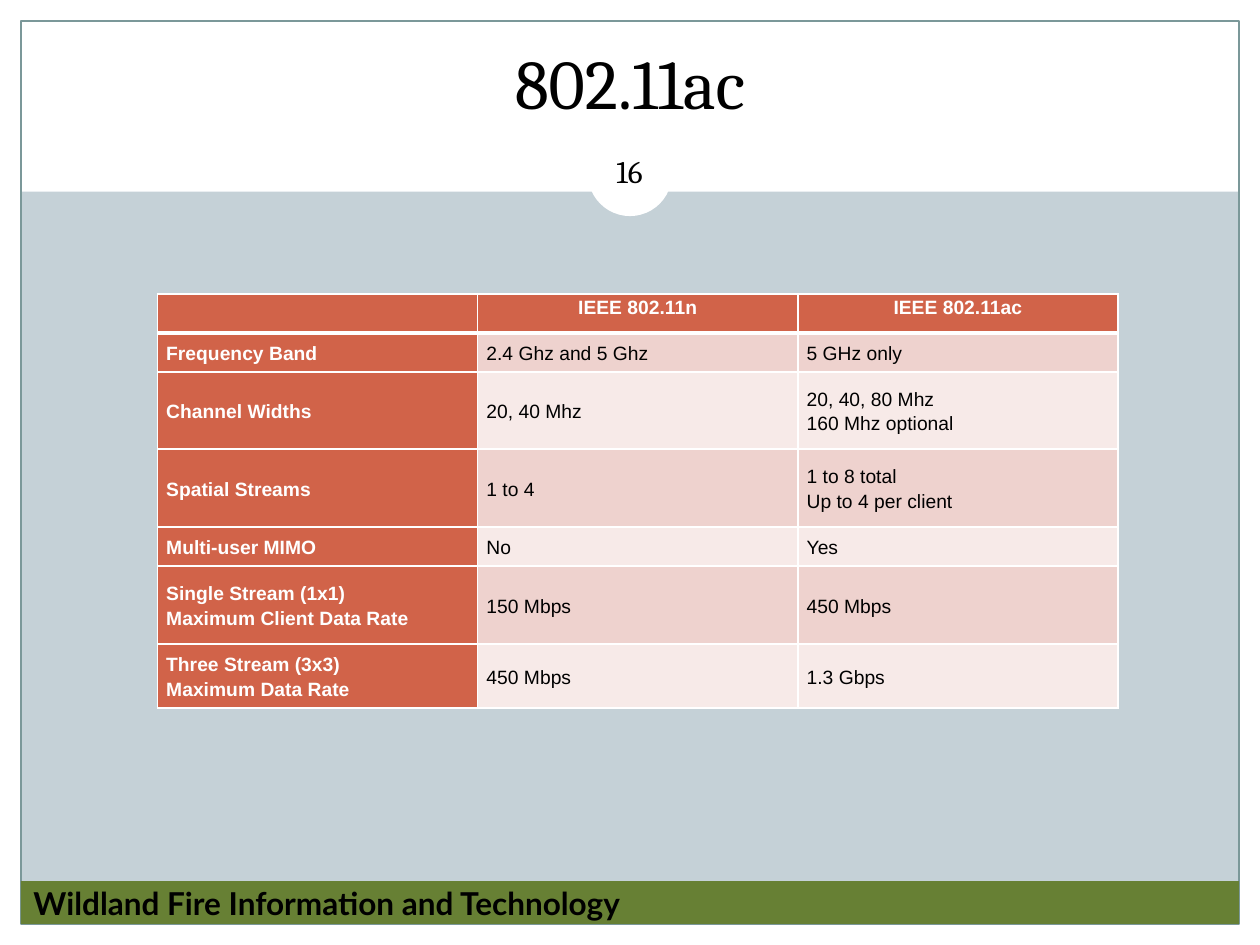
"""Build the 802.11ac comparison slide."""
from lxml import etree
from pptx import Presentation, util as u
from pptx.dml.color import RGBColor
from pptx.enum import shapes, text
from pptx.oxml.ns import qn

Pt = u.Pt


def paint(fill, color):
    fill.solid()
    fill.fore_color.rgb = RGBColor.from_string(color)


def style(frame, font, size, color="000000", bold=False, align=text.PP_ALIGN.LEFT):
    for paragraph in frame.paragraphs:
        paragraph.alignment = align
        for span in paragraph.runs:
            span.font.name = font
            span.font.size = Pt(size)
            span.font.bold = bold
            span.font.color.rgb = RGBColor.from_string(color)


deck = Presentation()
deck.slide_width, deck.slide_height = Pt(720), Pt(540)
page = deck.slides.add_slide(deck.slide_layouts[6])
paint(page.background.fill, "C5D1D7")

RECTANGLE, OVAL = shapes.MSO_SHAPE.RECTANGLE, shapes.MSO_SHAPE.OVAL
panels = [
    (RECTANGLE, (0, 528, 720, 12), "FFFFFF"),
    (RECTANGLE, (0, 0, 720, 109.5), "FFFFFF"),
    (RECTANGLE, (0, 0, 12, 540), "FFFFFF"),
    (RECTANGLE, (708, 0, 12, 540), "FFFFFF"),
    (RECTANGLE, (12, 12, 696, 516), None),
    (OVAL, (336, 75.5, 48, 48), "FFFFFF"),
    (RECTANGLE, (12, 503.5, 696, 24.5), "678034"),
]
for kind, place, color in panels:
    panel = page.shapes.add_shape(kind, *map(Pt, place))
    panel.shadow.inherit = False
    if color:
        paint(panel.fill, color)
        panel.line.fill.background()
    else:
        panel.fill.background()
        paint(panel.line.fill, "7B9899")
        panel.line.width = Pt(0.75)

footer = panel.text_frame
footer.text = "Wildland Fire Information and Technology"
footer.vertical_anchor = text.MSO_ANCHOR.MIDDLE
style(footer, "Lato", 18, bold=True)

labels = [
    ("802.11ac", (24, 18, 672, 60), 40, 7.2, text.MSO_ANCHOR.BOTTOM, text.PP_ALIGN.CENTER),
    ("16", (333.5, 80.5, 52.5, 34.5), 18, 3.6, text.MSO_ANCHOR.MIDDLE, text.PP_ALIGN.CENTER),
]
for words, place, size, inset, anchor, align in labels:
    box = page.shapes.add_textbox(*map(Pt, place))
    frame = box.text_frame
    frame.word_wrap = True
    frame.text = words
    frame.margin_top = frame.margin_bottom = Pt(inset)
    frame.vertical_anchor = anchor
    style(frame, "Cambria", size, align=align)

rows = [
    ("", "IEEE 802.11n", "IEEE 802.11ac"),
    ("Frequency Band", "2.4 Ghz and 5 Ghz", "5 GHz only"),
    ("Channel Widths", "20, 40 Mhz", "20, 40, 80 Mhz\n160 Mhz optional"),
    ("Spatial Streams", "1 to 4", "1 to 8 total\nUp to 4 per client"),
    ("Multi-user MIMO", "No", "Yes"),
    ("Single Stream (1x1)\nMaximum Client Data Rate", "150 Mbps", "450 Mbps"),
    ("Three Stream (3x3)\nMaximum Data Rate", "450 Mbps", "1.3 Gbps"),
]
heights = [22.3, 22.3, 43.9, 44.6, 22.3, 44.6, 36.7]
table = page.shapes.add_table(
    len(rows), 3, Pt(90), Pt(168), Pt(549), Pt(sum(heights))).table
for column in table.columns:
    column.width = Pt(183)

for r, (words, height) in enumerate(zip(rows, heights)):
    table.rows[r].height = Pt(height)
    for c, entry in enumerate(words):
        cell = table.cell(r, c)
        cell.text = entry
        cell.margin_left = cell.margin_right = Pt(5)
        cell.margin_top = cell.margin_bottom = 0
        if r:
            cell.vertical_anchor = text.MSO_ANCHOR.MIDDLE
        heading = r == 0 or c == 0
        style(cell.text_frame, "Arial", 11, "FFFFFF" if heading else "000000", heading,
              text.PP_ALIGN.LEFT if r else text.PP_ALIGN.CENTER)
        if entry:
            for paragraph in cell.text_frame.paragraphs:
                paragraph.line_spacing = 1.15
        properties = cell._tc.get_or_add_tcPr()
        for side in "LRTB":
            thick = (r, side) in ((0, "B"), (1, "T"))
            border = etree.SubElement(properties, qn("a:ln" + side), w=str(Pt(3 if thick else 1)))
            solid = etree.SubElement(border, qn("a:solidFill"))
            etree.SubElement(solid, qn("a:srgbClr"), val="FFFFFF")
        paint(cell.fill, "D16349" if heading else "EED2CE" if r % 2 else "F7EAE8")

deck.save("out.pptx")
